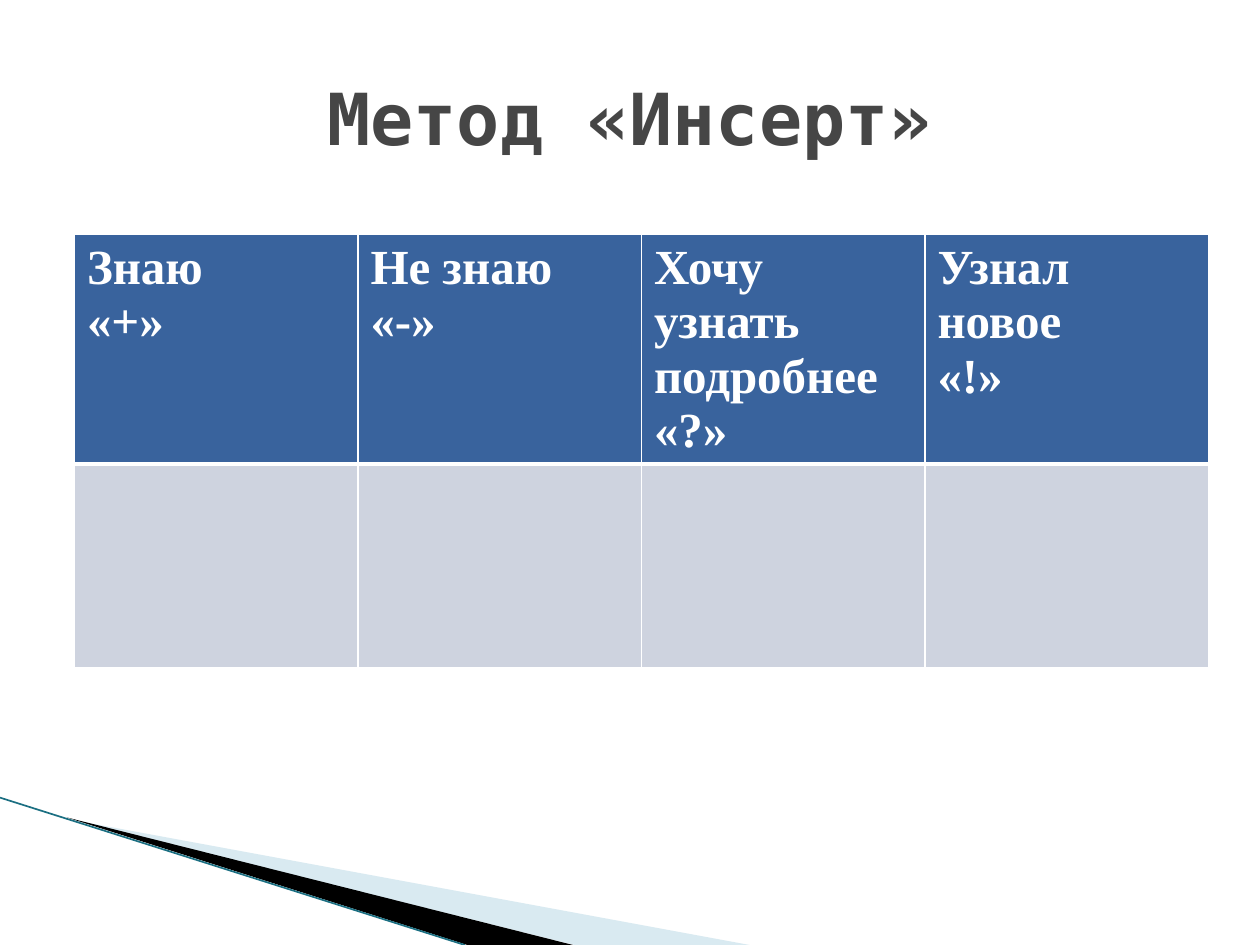
import pptx
import pptx.dml.color
import pptx.enum.dml
import pptx.enum.shapes
import pptx.enum.text
import pptx.oxml
import pptx.oxml.ns
import pptx.util

Cm = pptx.util.Cm
Pt = pptx.util.Pt
RGBColor = pptx.dml.color.RGBColor

WHITE = RGBColor(0xFF, 0xFF, 0xFF)
BLACK = RGBColor(0x00, 0x00, 0x00)
GREY = RGBColor(0x46, 0x46, 0x46)
HEADER = RGBColor(0x39, 0x63, 0x9D)
BODY = RGBColor(0xCE, 0xD3, 0xDF)
PALE = RGBColor(0xA0, 0xCB, 0xDC)
TEAL = RGBColor(0x1B, 0x6F, 0x82)

TITLE_FONT = {"name": "DejaVu Sans Mono", "size": Pt(41), "bold": True}
HEADER_FONT = {"name": "Times New Roman", "size": Pt(28), "bold": True}
TITLE_BOX = {"left": Cm(1.27), "top": Cm(0.76), "width": Cm(22.86), "height": Cm(3.18)}
TITLE_FRAME = {
    "word_wrap": True,
    "auto_size": pptx.enum.text.MSO_AUTO_SIZE.NONE,
    "vertical_anchor": pptx.enum.text.MSO_ANCHOR.MIDDLE,
}
COLUMNS = [
    ["Знаю", "«+»"],
    ["Не знаю", "«-»"],
    ["Хочу узнать", "подробнее", "«?»"],
    ["Узнал новое", "«!»"],
]


def set_attrs(obj, values):
    """Set each attribute of an object from a dict of values."""
    for name, value in values.items():
        setattr(obj, name, value)


def add_run(p, text, font, color):
    """Add a formatted run to a paragraph."""
    r = p.add_run()
    r.text = text
    set_attrs(r.font, font)
    r.font.color.rgb = color


def add_title(s, text):
    """Place and fill the title placeholder."""
    sp = s.shapes.title
    set_attrs(sp, TITLE_BOX)
    tf = sp.text_frame
    set_attrs(tf, TITLE_FRAME)
    p = tf.paragraphs[0]
    p.alignment = pptx.enum.text.PP_ALIGN.CENTER
    add_run(p, text, TITLE_FONT, GREY)


def add_wedge(s, points, color, opacity=100):
    """Draw a filled triangle through points given in centimetres."""
    start, *rest = [(Cm(x), Cm(y)) for x, y in points]
    builder = s.shapes.build_freeform(*start)
    builder.add_line_segments(rest)
    sp = builder.convert_to_shape()
    sp.shadow.inherit = False
    sp.line.fill.background()
    sp.fill.solid()
    sp.fill.fore_color.rgb = color
    if opacity < 100:
        clr = sp.fill._xPr.find(".//" + pptx.oxml.ns.qn("a:srgbClr"))
        alpha = pptx.oxml.parse_xml(
            f'<a:alpha {pptx.oxml.ns.nsdecls("a")} val="{opacity * 1000}"/>')
        clr.append(alpha)


def add_line(s, start, end, color, width):
    """Draw a straight line between two points in centimetres."""
    ends = [Cm(v) for v in (*start, *end)]
    sp = s.shapes.add_connector(pptx.enum.shapes.MSO_CONNECTOR.STRAIGHT, *ends)
    sp.line.color.rgb = color
    sp.line.width = Pt(width)
    sp._element.spPr.append(
        pptx.oxml.parse_xml(f'<a:effectLst {pptx.oxml.ns.nsdecls("a")}/>'))


def format_cell(cell, color, widths):
    """Give a cell its white borders and its fill."""
    tcPr = cell._tc.get_or_add_tcPr()
    for side, width in widths.items():
        tcPr.append(pptx.oxml.parse_xml(
            f'<a:ln{side} {pptx.oxml.ns.nsdecls("a")} w="{Pt(width)}">'
            f'<a:solidFill><a:srgbClr val="{WHITE}"/></a:solidFill></a:ln{side}>'))
    cell.fill.solid()
    cell.fill.fore_color.rgb = color


def add_insert_table(s):
    """Add the table with a header row and an empty row to fill in."""
    table = s.shapes.add_table(
        2, len(COLUMNS), Cm(1.5), Cm(4.73), Cm(22.86), Cm(8.71)).table
    for row, height in zip(table.rows, (4.6, 4.11)):
        row.height = Cm(height)
    for col, lines in enumerate(COLUMNS):
        header = table.cell(0, col)
        format_cell(header, HEADER, {"L": 1, "R": 1, "T": 1, "B": 3})
        format_cell(table.cell(1, col), BODY, {"L": 1, "R": 1, "T": 3, "B": 1})
        tf = header.text_frame
        for i, text in enumerate(lines):
            p = tf.add_paragraph() if i else tf.paragraphs[0]
            add_run(p, text, HEADER_FONT, WHITE)


def main():
    """Build and save the slide."""
    prs = pptx.Presentation()
    prs.slide_width, prs.slide_height = Cm(25.4), Cm(19.05)
    s = prs.slides.add_slide(prs.slide_layouts[5])
    add_wedge(s, [(1.4, 16.52), (15.11, 19.05), (11.58, 19.05)], PALE, 40)
    add_wedge(s, [(1.35, 16.48), (11.55, 19.05), (9.42, 19.05)], BLACK)
    add_line(s, (0, 16.08), (9.37, 19.05), TEAL, 0.95)
    add_insert_table(s)
    add_title(s, "Метод «Инсерт»")
    prs.save("out.pptx")


if __name__ == "__main__":
    main()
